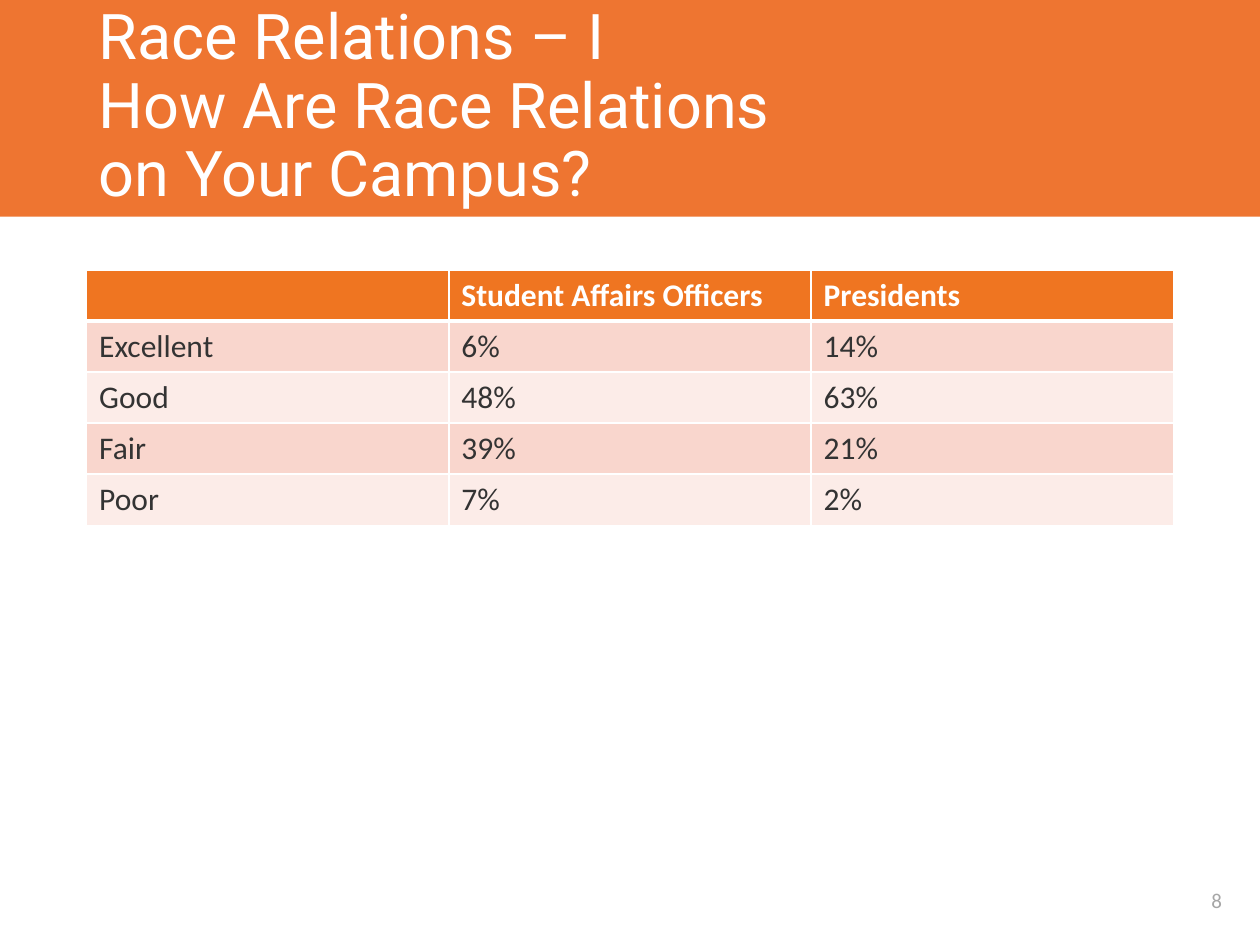
"""Build the race relations survey slide with its results table."""
from dataclasses import dataclass

from lxml import etree
from pptx import Presentation
from pptx.dml.color import RGBColor
from pptx.enum import shapes, text
from pptx.oxml.ns import qn
from pptx.util import Pt


@dataclass(frozen=True)
class Theme:
    banner: str = "EE7531"
    header: str = "EF7521"
    bands: tuple = ("F9D6CD", "FCECE8")
    white: str = "FFFFFF"
    ink: str = "333333"
    muted: str = "A6A6A6"
    heading: str = "Roboto"
    body: str = "Calibri"
    title_size: int = 36
    table_size: int = 18
    number_size: int = 12


def style(p, name, size, color, bold=False):
    p.font.name, p.font.size, p.font.bold = name, Pt(size), bold
    p.font.color.rgb = RGBColor.from_string(color)


def border(cell, side, width):
    ln = etree.SubElement(cell._tc.get_or_add_tcPr(), qn(f"a:ln{side}"), w=str(Pt(width)))
    fill = etree.SubElement(ln, qn("a:solidFill"))
    etree.SubElement(fill, qn("a:srgbClr"), val=theme.white)


theme = Theme()
prs = Presentation()
prs.slide_width, prs.slide_height = Pt(720), Pt(540)
s = prs.slides.add_slide(prs.slide_layouts[6])

banner = s.shapes.add_shape(shapes.MSO_SHAPE.RECTANGLE, Pt(-0.7), 0, Pt(721.4), Pt(123.8))
banner.shadow.inherit = False
banner.fill.solid()
banner.fill.fore_color.rgb = RGBColor.from_string(theme.banner)
banner.line.fill.background()

labels = [
    ((49.5, 0, 621, 123), "Race Relations – I\vHow Are Race Relations \von Your Campus?",
     theme.heading, theme.title_size, theme.white, text.PP_ALIGN.LEFT, 0.9),
    ((670.5, 500.4, 49.5, 28), "8",
     theme.body, theme.number_size, theme.muted, text.PP_ALIGN.CENTER, 1.0),
]
for box, words, name, size, color, align, spacing in labels:
    tf = s.shapes.add_textbox(*map(Pt, box)).text_frame
    tf.word_wrap = True
    tf.vertical_anchor = text.MSO_ANCHOR.MIDDLE
    p = tf.paragraphs[0]
    p.text, p.alignment, p.line_spacing = words, align, spacing
    style(p, name, size, color)

rows = [
    ("", "Student Affairs Officers", "Presidents"),
    ("Excellent", "6%", "14%"),
    ("Good", "48%", "63%"),
    ("Fair", "39%", "21%"),
    ("Poor", "7%", "2%"),
]
table = s.shapes.add_table(len(rows), 3, Pt(49.5), Pt(154.2), Pt(621), Pt(146)).table
for col in table.columns:
    col.width = Pt(207)
for i, row in enumerate(rows):
    table.rows[i].height = Pt(29.2)
    for j, words in enumerate(row):
        cell = table.cell(i, j)
        for side in "LRTB":
            heavy = (i, side) in ((0, "B"), (1, "T"))
            border(cell, side, 3 if heavy else 1)
        cell.fill.solid()
        color = theme.bands[(i - 1) % 2] if i else theme.header
        cell.fill.fore_color.rgb = RGBColor.from_string(color)
        p = cell.text_frame.paragraphs[0]
        p.text = words
        style(p, theme.body, theme.table_size, theme.ink if i else theme.white, bold=i == 0)

prs.save("out.pptx")
